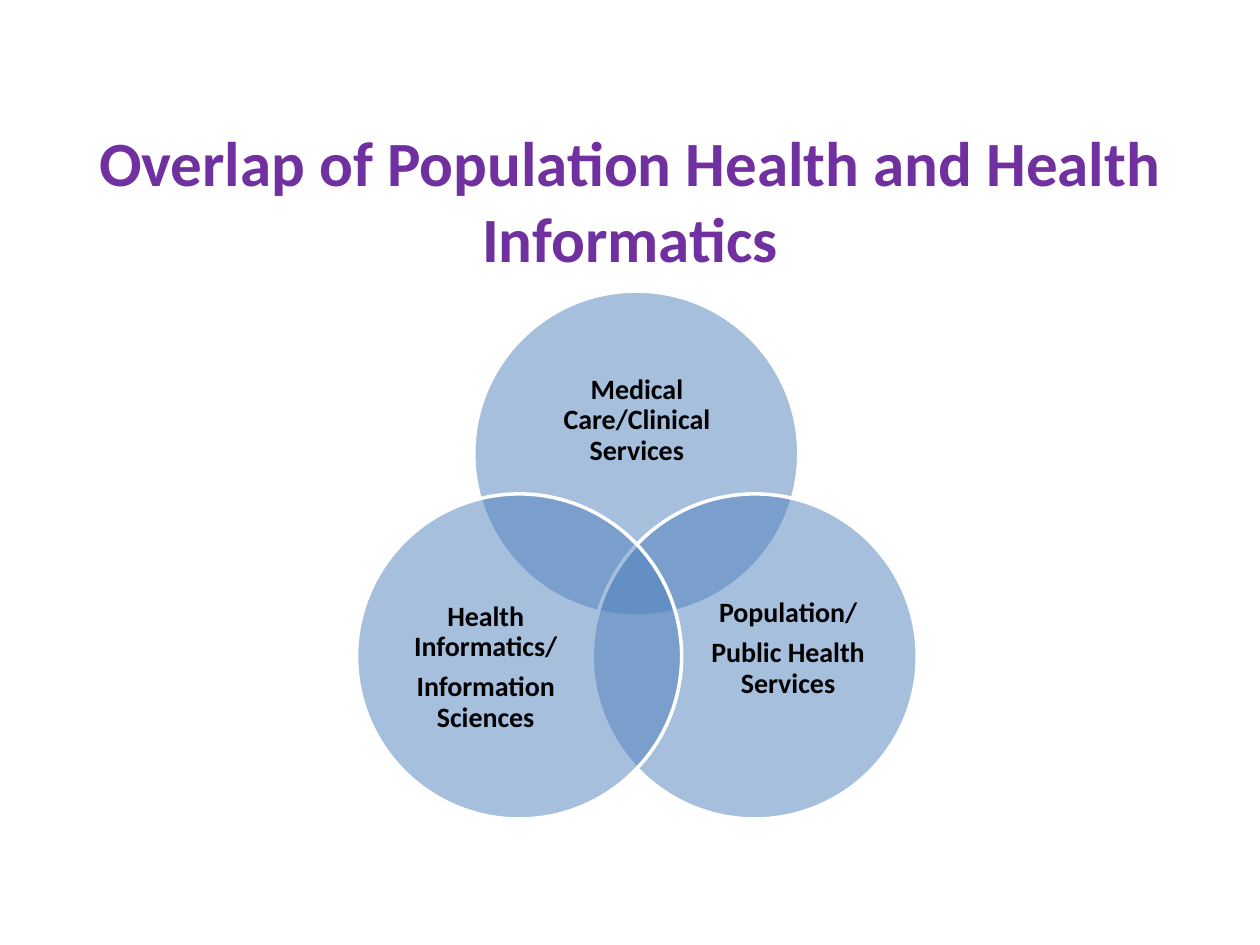
import pptx
import pptx.dml.color
import pptx.enum.shapes
import pptx.enum.text
import pptx.oxml.ns
import pptx.util
import lxml.etree

Inches = pptx.util.Inches
Pt = pptx.util.Pt


def color(value):
    return pptx.dml.color.RGBColor.from_string(value)


def add_text(shapes, place, lines, size, value, inset=None):
    box = shapes.add_textbox(*[Inches(length) for length in place])
    frame = box.text_frame
    frame.word_wrap = True
    frame.vertical_anchor = pptx.enum.text.MSO_ANCHOR.MIDDLE
    if inset is not None:
        frame.margin_left = frame.margin_right = Inches(inset)
        frame.margin_top = frame.margin_bottom = Inches(inset)
    paras = []
    for index, line in enumerate(lines):
        para = frame.add_paragraph() if index else frame.paragraphs[0]
        para.alignment = pptx.enum.text.PP_ALIGN.CENTER
        span = para.add_run()
        span.text = line
        span.font.name = "Calibri"
        span.font.size = Pt(size)
        span.font.bold = True
        span.font.color.rgb = color(value)
        paras.append(para)
    return paras


deck = pptx.Presentation()
deck.slide_width = Inches(10)
deck.slide_height = Inches(7.5)
page = deck.slides.add_slide(deck.slide_layouts[6])

# Title
add_text(page.shapes, (0.5, 0.78, 9, 1.6),
         ["Overlap of Population Health and Health Informatics"], 36, "7030A0")

# Venn diagram: circle corner, label place, label lines
diameter = 2.58
circles = [
    ((3.76, 2.31), (4.11, 2.76, 1.89, 1.16), ["Medical Care/Clinical Services"]),
    ((4.7, 3.92), (5.48, 4.59, 1.55, 1.12),
     ["Population/", "Public Health Services"]),
    ((2.83, 3.92), (3.08, 4.59, 1.55, 1.42),
     ["Health Informatics/", "Information Sciences"]),
]
venn = page.shapes.add_group_shape()
for (left, top), label_place, lines in circles:
    circle = venn.shapes.add_shape(
        pptx.enum.shapes.MSO_SHAPE.OVAL,
        Inches(left), Inches(top), Inches(diameter), Inches(diameter))
    circle.shadow.inherit = False
    circle.fill.solid()
    circle.fill.fore_color.rgb = color("4F81BD")
    circle.line.color.rgb = color("FFFFFF")
    circle.line.width = Pt(2)

    # Half-transparent fill
    fill_color = circle.fill._xPr.find(
        pptx.oxml.ns.qn("a:solidFill")).find(pptx.oxml.ns.qn("a:srgbClr"))
    alpha = lxml.etree.SubElement(fill_color, pptx.oxml.ns.qn("a:alpha"))
    alpha.set("val", "50000")

    for para in add_text(venn.shapes, label_place, lines, 16, "000000", 0):
        para.line_spacing = 0.9
        para.space_after = Pt(5.6)

deck.save("out.pptx")
